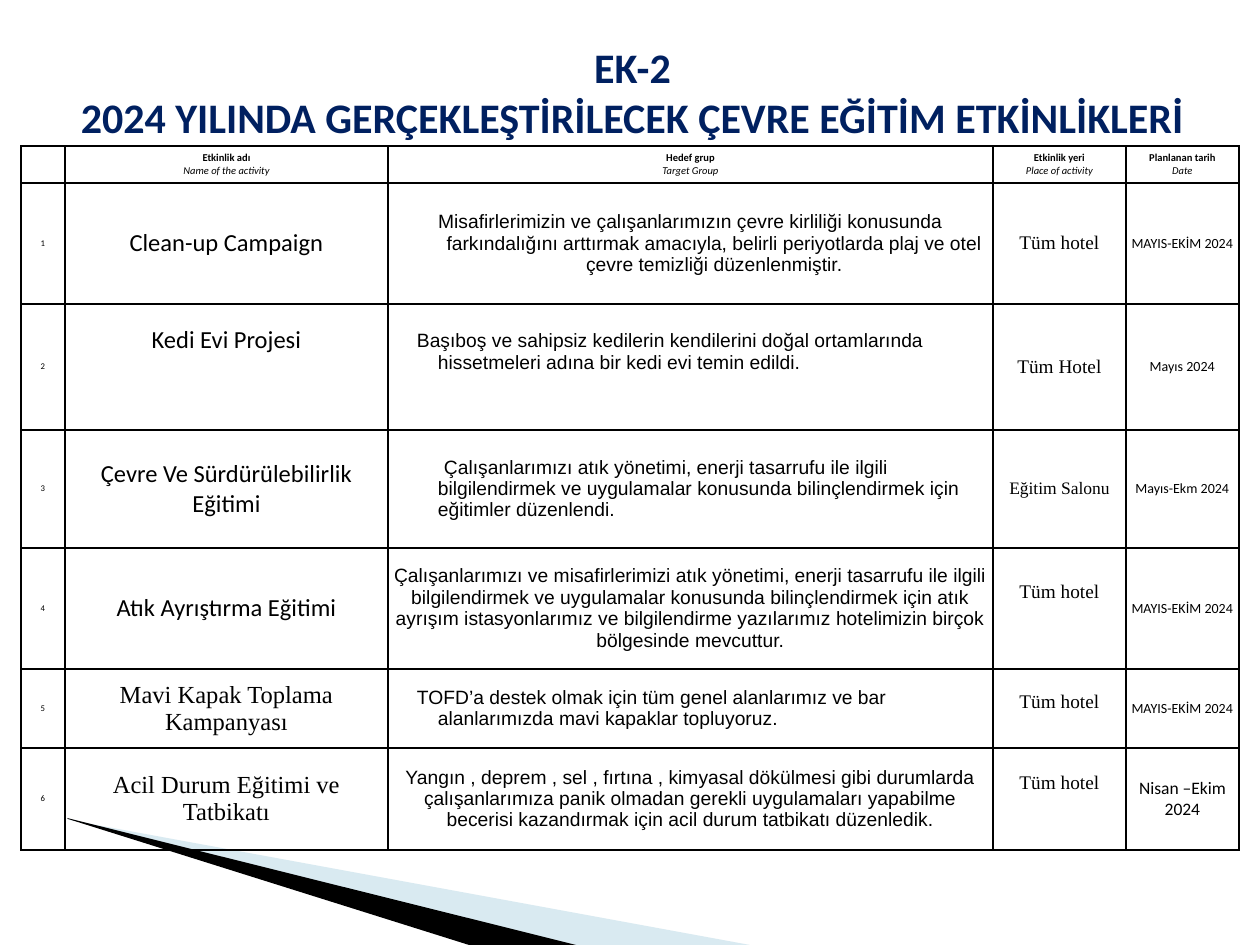
import lxml.etree
import pptx
import pptx.dml.color
import pptx.enum.text
import pptx.oxml
import pptx.oxml.ns
import pptx.util

PX = 914400 // 126
ALIGN = pptx.enum.text.PP_ALIGN
ANCHOR = pptx.enum.text.MSO_ANCHOR
SANS, SERIF, BODY = "Calibri", "Times New Roman", "Arial"

COLUMNS = [44, 323, 605, 133, 113]
HEIGHTS = [37, 121, 126, 118, 121, 79, 102]
HEADINGS = [
    ("Etkinlik adı", "Name of the activity"),
    ("Hedef grup", "Target Group"),
    ("Etkinlik yeri", "Place of activity"),
    ("Planlanan tarih", "Date"),
]
CENTRED_HANGING = dict(margin=48, indent=-48)
LEFT_HANGING = dict(margin=48, indent=-21, align=ALIGN.LEFT)
ACTIVITIES = [
    [("Clean-up Campaign", {}),
     ("Misafirlerimizin ve çalışanlarımızın çevre kirliliği konusunda farkındalığını arttırmak "
      "amacıyla, belirli periyotlarda plaj ve otel çevre temizliği düzenlenmiştir.", CENTRED_HANGING),
     ("Tüm hotel", {}), ("MAYIS-EKİM 2024", {})],
    [("Kedi Evi Projesi", dict(lift=27)),
     ("Başıboş ve sahipsiz kedilerin kendilerini doğal ortamlarında hissetmeleri adına bir kedi "
      "evi temin edildi.", dict(LEFT_HANGING, lift=15)),
     ("Tüm Hotel", {}), ("Mayıs 2024", {})],
    [("Çevre Ve Sürdürülebilirlik Eğitimi", {}),
     ("Çalışanlarımızı atık yönetimi, enerji tasarrufu ile ilgili bilgilendirmek ve uygulamalar "
      "konusunda bilinçlendirmek için eğitimler düzenlendi.", dict(LEFT_HANGING, indent=6)),
     ("Eğitim Salonu", dict(size=10)), ("Mayıs-Ekm 2024", {})],
    [("Atık Ayrıştırma Eğitimi", {}),
     ("Çalışanlarımızı ve misafirlerimizi atık yönetimi, enerji tasarrufu ile ilgili "
      "bilgilendirmek ve uygulamalar konusunda bilinçlendirmek için atık ayrışım istasyonlarımız "
      "ve bilgilendirme yazılarımız hotelimizin birçok bölgesinde mevcuttur.", {}),
     ("Tüm hotel", dict(lift=16)), ("MAYIS-EKİM 2024", {})],
    [("Mavi Kapak Toplama Kampanyası", dict(font=SERIF)),
     ("TOFD’a destek olmak için tüm genel alanlarımız ve bar alanlarımızda mavi kapaklar "
      "topluyoruz.", LEFT_HANGING),
     ("Tüm hotel", dict(lift=6)), ("MAYIS-EKİM 2024", {})],
    [("Acil Durum Eğitimi ve Tatbikatı", dict(font=SERIF)),
     ("Yangın , deprem , sel , fırtına , kimyasal dökülmesi gibi durumlarda çalışanlarımıza panik "
      "olmadan gerekli uygulamaları yapabilme becerisi kazandırmak için acil durum tatbikatı "
      "düzenledik.", {}),
     ("Tüm hotel", dict(lift=16)), ("Nisan –Ekim 2024", dict(size=10))],
]
COLUMN_STYLES = [dict(size=14), dict(size=11, font=BODY), dict(size=11, font=SERIF), dict(size=8)]


def px(length):
    """Turn pixels into EMU."""
    return pptx.util.Emu(length * PX)


def rgb(value):
    """Turn a hex string into a colour."""
    return pptx.dml.color.RGBColor.from_string(value)


def write(para, text, size=11, font=SANS, color="000000", bold=False, italic=False,
          align=ALIGN.CENTER, margin=0, indent=0):
    """Write formatted text into a paragraph."""
    para.alignment = align
    if margin:
        properties = para._p.get_or_add_pPr()
        properties.set("marL", str(px(margin)))
        properties.set("indent", str(px(indent)))
    span = para.add_run()
    span.text = text
    span.font.size = pptx.util.Pt(size)
    span.font.name = font
    span.font.bold = bold
    span.font.italic = italic
    span.font.color.rgb = rgb(color)


def add_wedge(page, points, color, opacity=100):
    """Draw one filled blade of the corner decoration."""
    builder = page.shapes.build_freeform(*points[0], scale=PX)
    builder.add_line_segments(points[1:], close=True)
    shape = builder.convert_to_shape()
    shape.shadow.inherit = False
    shape.line.fill.background()
    shape.fill.solid()
    shape.fill.fore_color.rgb = rgb(color)
    if opacity < 100:
        tone = shape.fill._xPr.find(".//" + pptx.oxml.ns.qn("a:srgbClr"))
        lxml.etree.SubElement(tone, pptx.oxml.ns.qn("a:alpha"), val=str(opacity * 1000))


def add_decoration(page, left, top):
    """Place the pair of blades from their shared tip."""
    blades = [
        ([(2, 2), (683, 127), (508, 127), (2, 1)], "A0CBDC", 40),
        ([(0, 0), (509, 127), (402, 127), (1, 1)], "000000", 100),
    ]
    for points, color, opacity in blades:
        add_wedge(page, [(left + x, top + y) for x, y in points], color, opacity)


def add_title(page, left, top, width, height):
    """Place the two-line title."""
    title = page.shapes.title
    title.left, title.top, title.width, title.height = map(px, (left, top, width, height))
    frame = title.text_frame
    frame.word_wrap = True
    frame.vertical_anchor = ANCHOR.BOTTOM
    frame.margin_left = frame.margin_right = frame.margin_top = 0
    frame.margin_bottom = px(4)
    style = dict(size=24, color="002060", bold=True)
    write(frame.paragraphs[0], "EK-2", **style)
    write(frame.add_paragraph(), "2024 YILINDA GERÇEKLEŞTİRİLECEK ÇEVRE EĞİTİM ETKİNLİKLERİ", **style)


def format_cell(cell, lift=0):
    """Give a cell its borders, margins and anchor, with its text raised by lift."""
    properties = cell._tc.get_or_add_tcPr()
    for side in "LRTB":
        properties.append(pptx.oxml.parse_xml(
            f'<a:ln{side} {pptx.oxml.ns.nsdecls("a")} w="12700">'
            f'<a:solidFill><a:srgbClr val="000000"/></a:solidFill></a:ln{side}>'))
    cell.fill.background()
    cell.vertical_anchor = ANCHOR.MIDDLE
    cell.margin_left = cell.margin_right = cell.margin_top = px(2)
    cell.margin_bottom = px(2 + 2 * lift)


def add_activities(page, left, top):
    """Place the table of planned activities."""
    frame = page.shapes.add_table(len(HEIGHTS), len(COLUMNS), px(left), px(top),
                                  px(sum(COLUMNS)), px(sum(HEIGHTS)))
    table = frame.table
    for column, width in zip(table.columns, COLUMNS):
        column.width = px(width)
    for row, height in zip(table.rows, HEIGHTS):
        row.height = px(height)

    corner = table.cell(0, 0)
    format_cell(corner)
    lxml.etree.SubElement(corner.text_frame.paragraphs[0]._p,
                          pptx.oxml.ns.qn("a:endParaRPr"), sz="600")
    for column, (name, translation) in enumerate(HEADINGS, 1):
        cell = table.cell(0, column)
        format_cell(cell)
        write(cell.text_frame.paragraphs[0], name, size=6, bold=True)
        write(cell.text_frame.add_paragraph(), translation, size=6, italic=True)

    for number, activity in enumerate(ACTIVITIES, 1):
        entries = [(str(number), dict(size=5))]
        entries += [(text, style | extra) for (text, extra), style in zip(activity, COLUMN_STYLES)]
        for column, (text, style) in enumerate(entries):
            cell = table.cell(number, column)
            format_cell(cell, style.pop("lift", 0))
            write(cell.text_frame.paragraphs[0], text, **style)


def main():
    """Build and save the deck."""
    deck = pptx.Presentation()
    deck.slide_width, deck.slide_height = px(1260), px(945)
    page = deck.slides.add_slide(deck.slide_layouts[5])
    add_decoration(page, 67, 818)
    add_title(page, 63, 31, 1139, 115)
    add_activities(page, 21, 146)
    deck.save("out.pptx")


if __name__ == "__main__":
    main()
